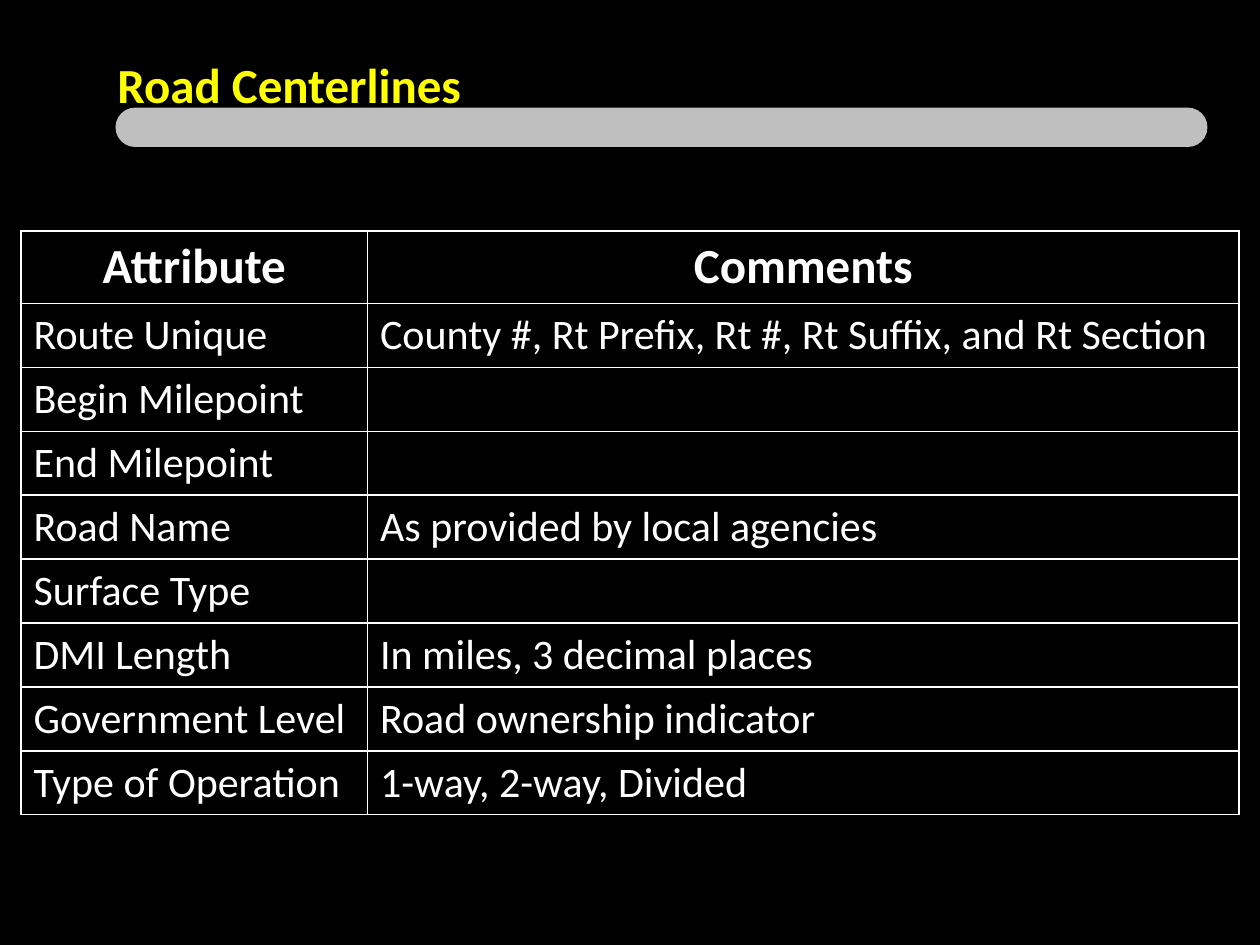
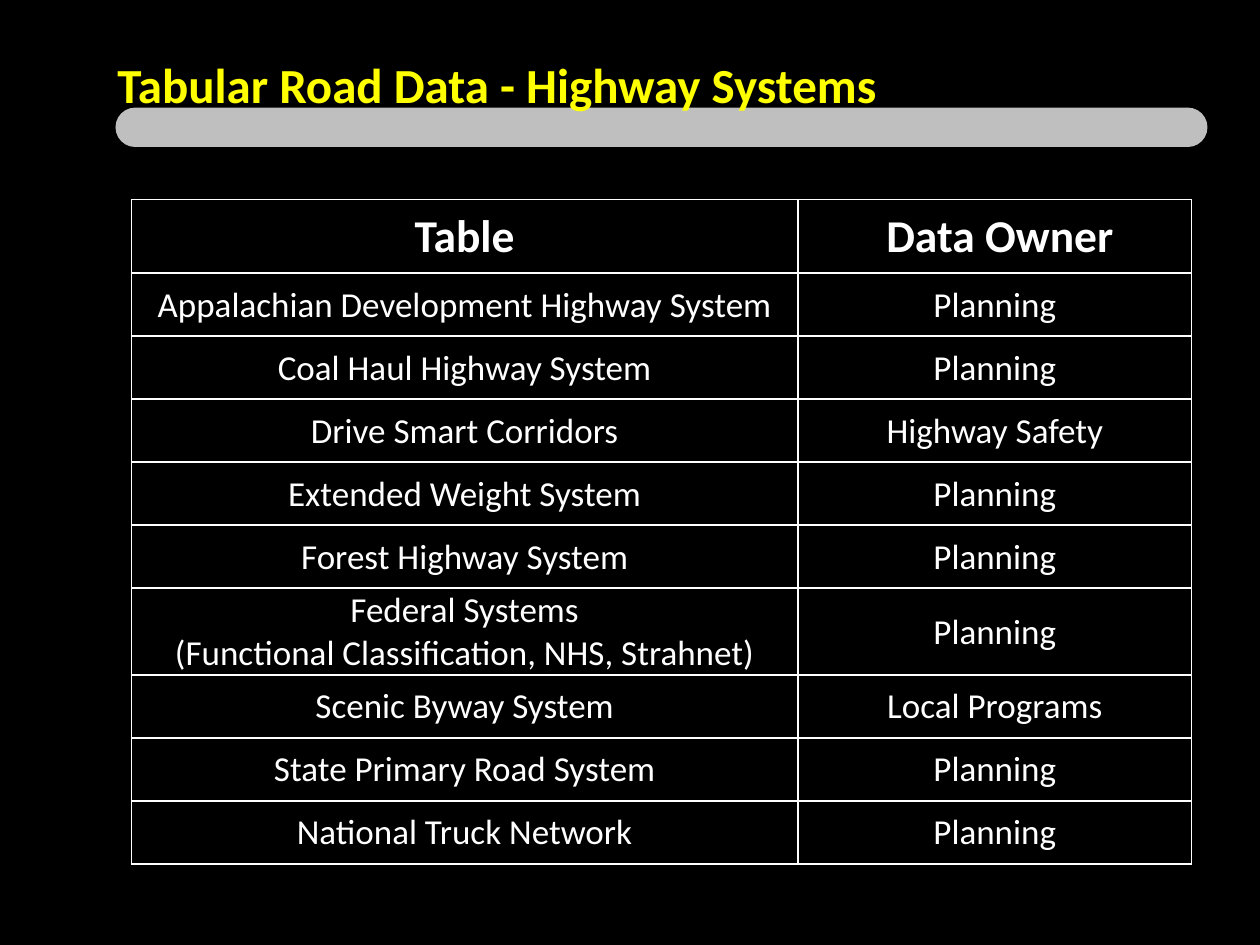
from dataclasses import dataclass

from lxml.etree import SubElement
from pptx import Presentation
from pptx.dml.color import RGBColor
from pptx.enum.shapes import MSO_SHAPE as Shape
from pptx.enum.text import MSO_ANCHOR as Anchor, PP_ALIGN as Align
from pptx.oxml.ns import qn
from pptx.util import Pt


@dataclass(frozen=True)
class Theme:
    font: str = "Calibri"
    background: str = "000000"
    title: str = "FFFF00"
    band: str = "BFBFBF"
    ink: str = "FFFFFF"
    title_size: int = 28
    border_width: int = 1


@dataclass(frozen=True)
class TableLook:
    left: float
    top: float
    widths: tuple
    header_height: float
    row_height: float
    header_size: int
    body_size: int
    body_align: Align
    margins: tuple


CENTERLINES_LOOK = TableLook(12, 132, (198, 498), 41.4, 36.5, 28, 24,
                             Align.LEFT, (7.2, 3.6, 7.2, 3.6))
SYSTEMS_LOOK = TableLook(75, 114, (381, 225), 42, 36, 26, 20,
                         Align.CENTER, (0.7, 0.7, 0.7, 0))
TWO_LINE_HEIGHT = 49.7

CENTERLINES = [
    ("Attribute", "Comments"),
    ("Route Unique", "County #, Rt Prefix, Rt #, Rt Suffix, and Rt Section"),
    ("Begin Milepoint", ""),
    ("End Milepoint", ""),
    ("Road Name", "As provided by local agencies"),
    ("Surface Type", ""),
    ("DMI Length", "In miles, 3 decimal places"),
    ("Government Level", "Road ownership indicator"),
    ("Type of Operation", "1-way, 2-way, Divided"),
]

HIGHWAY_SYSTEMS = [
    ("Table", " Data Owner"),
    ("Appalachian Development Highway System", "Planning"),
    ("Coal Haul Highway System", "Planning"),
    ("Drive Smart Corridors", "Highway Safety"),
    ("Extended Weight System", "Planning"),
    ("Forest Highway System", "Planning"),
    ("Federal Systems\n(Functional Classification, NHS, Strahnet)", "Planning"),
    ("Scenic Byway System", "Local Programs"),
    ("State Primary Road System", "Planning"),
    ("National Truck Network", "Planning"),
]


class SlideBuilder:
    def __init__(self, deck, theme):
        self.deck = deck
        self.theme = theme
        self.page = None

    def new_page(self):
        self.page = self.deck.slides.add_slide(self.deck.slide_layouts[6])
        fill = self.page.background.fill
        fill.solid()
        fill.fore_color.rgb = RGBColor.from_string(self.theme.background)

    def set_text(self, frame, text, size, color, bold, align=Align.LEFT):
        frame.text = text
        for para in frame.paragraphs:
            para.alignment = align
            para.font.name = self.theme.font
            para.font.size = Pt(size)
            para.font.bold = bold
            para.font.color.rgb = RGBColor.from_string(color)

    def band(self):
        bar = self.page.shapes.add_shape(
            Shape.ROUNDED_RECTANGLE, Pt(66), Pt(61.5), Pt(624), Pt(22.5))
        bar.adjustments[0] = 0.5
        bar.shadow.inherit = False
        bar.fill.solid()
        bar.fill.fore_color.rgb = RGBColor.from_string(self.theme.band)
        bar.line.fill.background()

    def title(self, text):
        box = self.page.shapes.add_textbox(Pt(60), Pt(30), Pt(594), Pt(36))
        box.text_frame.word_wrap = True
        box.text_frame.vertical_anchor = Anchor.MIDDLE
        self.set_text(box.text_frame, text, self.theme.title_size,
                      self.theme.title, True)

    def border(self, cell):
        properties = cell._tc.get_or_add_tcPr()
        for side in ("lnL", "lnR", "lnT", "lnB"):
            line = SubElement(properties, qn(f"a:{side}"),
                              w=str(Pt(self.theme.border_width)))
            fill = SubElement(line, qn("a:solidFill"))
            SubElement(fill, qn("a:srgbClr"), val=self.theme.ink)

    def cell(self, cell, text, look, is_header):
        self.border(cell)
        cell.fill.background()
        cell.vertical_anchor = Anchor.MIDDLE
        (cell.margin_left, cell.margin_top,
         cell.margin_right, cell.margin_bottom) = map(Pt, look.margins)
        self.set_text(cell.text_frame, text,
                      look.header_size if is_header else look.body_size,
                      self.theme.ink, is_header,
                      Align.CENTER if is_header else look.body_align)

    def table(self, rows, look):
        heights = [look.header_height] + [
            TWO_LINE_HEIGHT if "\n" in name else look.row_height
            for name, _ in rows[1:]]
        table = self.page.shapes.add_table(
            len(rows), len(look.widths), Pt(look.left), Pt(look.top),
            Pt(sum(look.widths)), Pt(sum(heights))).table
        table.first_row = table.horz_banding = False
        for column, width in zip(table.columns, look.widths):
            column.width = Pt(width)
        for index, (texts, height) in enumerate(zip(rows, heights)):
            table.rows[index].height = Pt(height)
            for cell, text in zip(table.rows[index].cells, texts):
                self.cell(cell, text, look, index == 0)

    def table_page(self, title, rows, look):
        self.new_page()
        self.table(rows, look)
        self.band()
        self.title(title)


def main():
    deck = Presentation()
    deck.slide_width, deck.slide_height = Pt(720), Pt(540)
    builder = SlideBuilder(deck, Theme())
    builder.table_page("Road Centerlines", CENTERLINES, CENTERLINES_LOOK)
    builder.table_page("Tabular Road Data - Highway Systems",
                       HIGHWAY_SYSTEMS, SYSTEMS_LOOK)
    deck.save("out.pptx")


if __name__ == "__main__":
    main()
